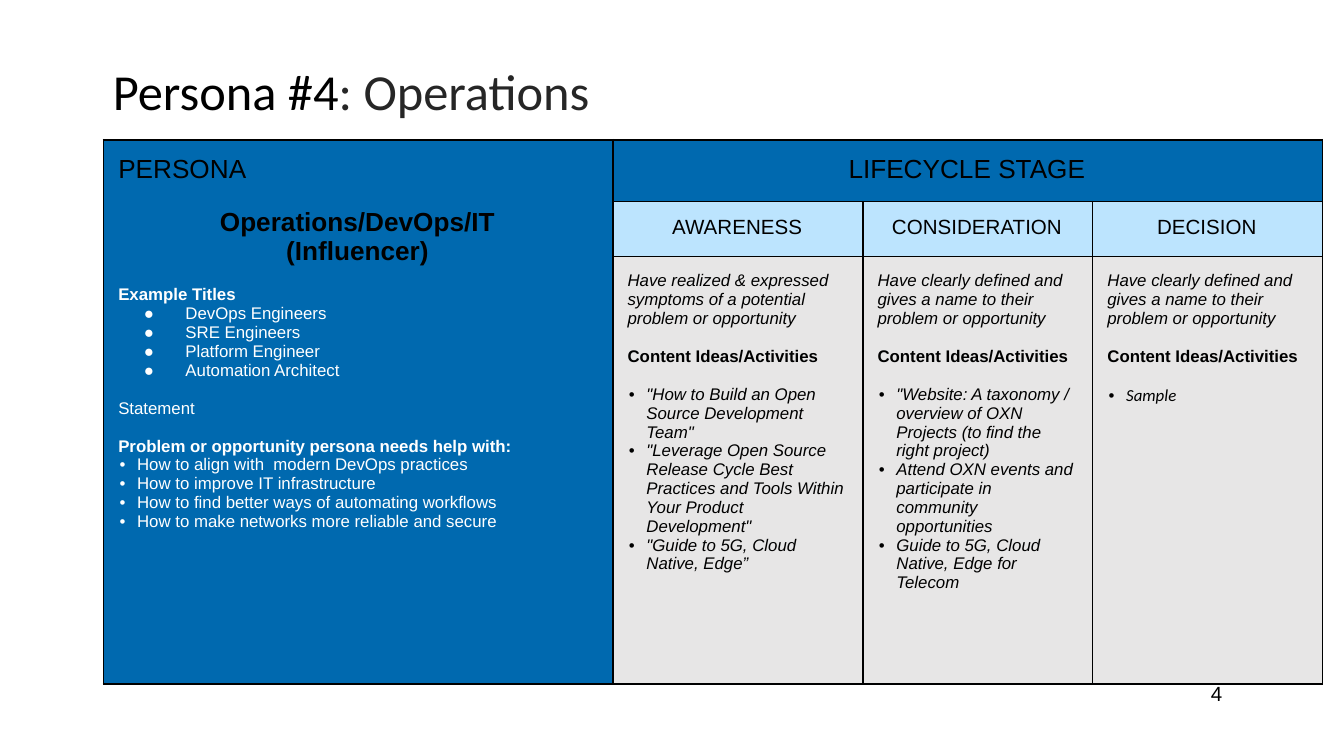
from lxml import etree
from pptx import Presentation
from pptx import util as u
from pptx.dml.color import RGBColor
from pptx.enum import text as t
from pptx.oxml import ns

HUES = {"black": "000000", "ink": "262626", "white": "FFFFFF",
        "blue": "0069AF", "sky": "59BCFE", "grey": "E7E6E6"}
GAP = 10.3  # one line of 9 pt text
MID = t.PP_ALIGN.CENTER
DOT = ("•", 0.14, -0.13)
DISC = ("●", 0.5, -0.31)
PADS = {"left": 0.11, "right": 0.12, "top": 0.11, "bottom": 0.11}


def sub(node, tag, **attrs):
    return etree.SubElement(node, ns.qn("a:" + tag), attrs)


class Deck:
    def __init__(self, wide, high):
        self.prs = Presentation()
        self.prs.slide_width, self.prs.slide_height = u.Inches(wide), u.Inches(high)
        self.slide = self.prs.slides.add_slide(self.prs.slide_layouts[6])

    def run(self, para, words, hue="black", face="Arial", **form):
        run = para.add_run()
        run.text = words
        run.font.color.rgb = RGBColor.from_string(HUES[hue])
        for key, val in {"name": face, **form}.items():
            setattr(run.font, key, u.Pt(val) if key == "size" else val)

    def bullet(self, para, mark, left, hang, hue):
        props = para._p.get_or_add_pPr()
        props.set("marL", str(u.Inches(left)))
        props.set("indent", str(u.Inches(hang)))
        sub(sub(props, "buClr"), "srgbClr", val=HUES[hue])
        sub(props, "buFont", typeface="Arial")
        sub(props, "buChar", char=mark)

    def fill(self, frame, paras):
        """Write (words, format) pairs as the paragraphs of a text frame."""
        for n, (words, form) in enumerate(paras):
            form = dict(form)
            para = frame.add_paragraph() if n else frame.paragraphs[0]
            para.alignment = form.pop("align", t.PP_ALIGN.LEFT)
            para.space_before = u.Pt(form.pop("gap", 0))
            mark = form.pop("mark", None)
            if mark:
                self.bullet(para, *mark, form.get("hue", "black"))
            self.run(para, words, **form)

    def box(self, left, top, wide, high, pad):
        area = self.slide.shapes.add_textbox(*map(u.Inches, (left, top, wide, high)))
        frame = area.text_frame
        look = {"word_wrap": True, "vertical_anchor": t.MSO_ANCHOR.MIDDLE,
                "margin_left": u.Inches(0.07), "margin_right": u.Inches(0.07),
                "margin_top": u.Inches(pad), "margin_bottom": u.Inches(pad)}
        for key, val in look.items():
            setattr(frame, key, val)
        return frame

    def grid(self, left, top, cols, rows):
        size = map(u.Inches, (left, top, sum(cols), sum(rows)))
        table = self.slide.shapes.add_table(len(rows), len(cols), *size).table
        table.first_row = table.horz_banding = False
        for col, wide in zip(table.columns, cols):
            col.width = u.Inches(wide)
        for row, high in zip(table.rows, rows):
            row.height = u.Inches(high)
        for cell in table.iter_cells():
            self.frame(cell)
        return table

    def frame(self, cell):
        """Give a cell its black borders and its margins."""
        for side, pad in PADS.items():
            setattr(cell, "margin_" + side, u.Inches(pad))
            line = sub(cell._tc.get_or_add_tcPr(), "ln" + side[0].upper(), w=str(u.Pt(1)))
            sub(sub(line, "solidFill"), "srgbClr", val=HUES["black"])

    def cell(self, cell, hue, paras, alpha=None):
        cell.fill.solid()
        cell.fill.fore_color.rgb = RGBColor.from_string(HUES[hue])
        if alpha:
            tint = cell._tc.tcPr.find(ns.qn("a:solidFill"))[0]
            sub(tint, "alpha", val=str(alpha * 1000))
        self.fill(cell.text_frame, paras)


HEAD = {"size": 14}
NAME = {"size": 14, "bold": True, "align": MID}
STAGE = {"size": 11, "align": MID}
NOTE = {"size": 9, "hue": "white"}
TITLE = {**NOTE, "bold": True, "gap": GAP}
LEAD = {"size": 9, "italic": True}
IDEAS = {"size": 9, "bold": True, "gap": GAP}

JOBS = ["DevOps Engineers", "SRE Engineers", "Platform Engineer", "Automation Architect"]
NEEDS = ["How to align with  modern DevOps practices",
         "How to improve IT infrastructure",
         "How to find better ways of automating workflows",
         "How to make networks more reliable and secure"]
KNOWN = "Have clearly defined and gives a name to their problem or opportunity"
STAGES = [
    ("AWARENESS",
     "Have realized & expressed symptoms of a potential problem or opportunity",
     ['"How to Build an Open Source Development Team"',
      '"Leverage Open Source Release Cycle Best Practices and Tools '
      'Within Your Product Development"',
      '"Guide to 5G, Cloud Native, Edge”'], "Arial"),
    ("CONSIDERATION", KNOWN,
     ['"Website: A taxonomy / overview of OXN Projects (to find the right project)',
      "Attend OXN events and participate in community opportunities",
      "Guide to 5G, Cloud Native, Edge for Telecom"], "Arial"),
    ("DECISION", KNOWN, ["Sample"], "Calibri"),
]


def main():
    deck = Deck(10, 10 * 9 / 16)
    title = deck.box(0.77, 0.23, 8.73, 0.94, 0.07).paragraphs[0]
    title.line_spacing = 0.9
    deck.run(title, "Persona #4", face="Calibri", size=27)
    deck.run(title, ": Operations", "ink", "Calibri", size=27)
    deck.fill(deck.box(8.94, 5.01, 0.56, 0.3, 0.04), [("4", {"size": 11})])

    table = deck.grid(0.77, 1.04, [3.79, 1.86, 1.71, 1.71], [0.46, 0.41, 2.81])
    table.cell(0, 0).merge(table.cell(2, 0))
    table.cell(0, 1).merge(table.cell(0, 3))
    deck.cell(table.cell(0, 0), "blue", [
        ("PERSONA", HEAD),
        ("Operations/DevOps/IT", {**NAME, "gap": 12.65}),
        ("(Influencer)", NAME),
        ("Example Titles", TITLE),
        *((job, {**NOTE, "mark": DISC}) for job in JOBS),
        ("Statement", {**NOTE, "gap": GAP}),
        ("Problem or opportunity persona needs help with:", TITLE),
        *((need, {**NOTE, "mark": DOT}) for need in NEEDS)])
    deck.cell(table.cell(0, 1), "blue", [("LIFECYCLE STAGE", {**HEAD, "align": MID})])
    for col, (stage, lead, ideas, face) in enumerate(STAGES, 1):
        deck.cell(table.cell(1, col), "sky", [(stage, STAGE)], alpha=40)
        deck.cell(table.cell(2, col), "grey", [
            (lead, LEAD),
            ("Content Ideas/Activities", IDEAS),
            *((idea, {**LEAD, "face": face, "mark": DOT, "gap": 0 if n else GAP})
              for n, idea in enumerate(ideas))])
    deck.prs.save("out.pptx")


if __name__ == "__main__":
    main()
